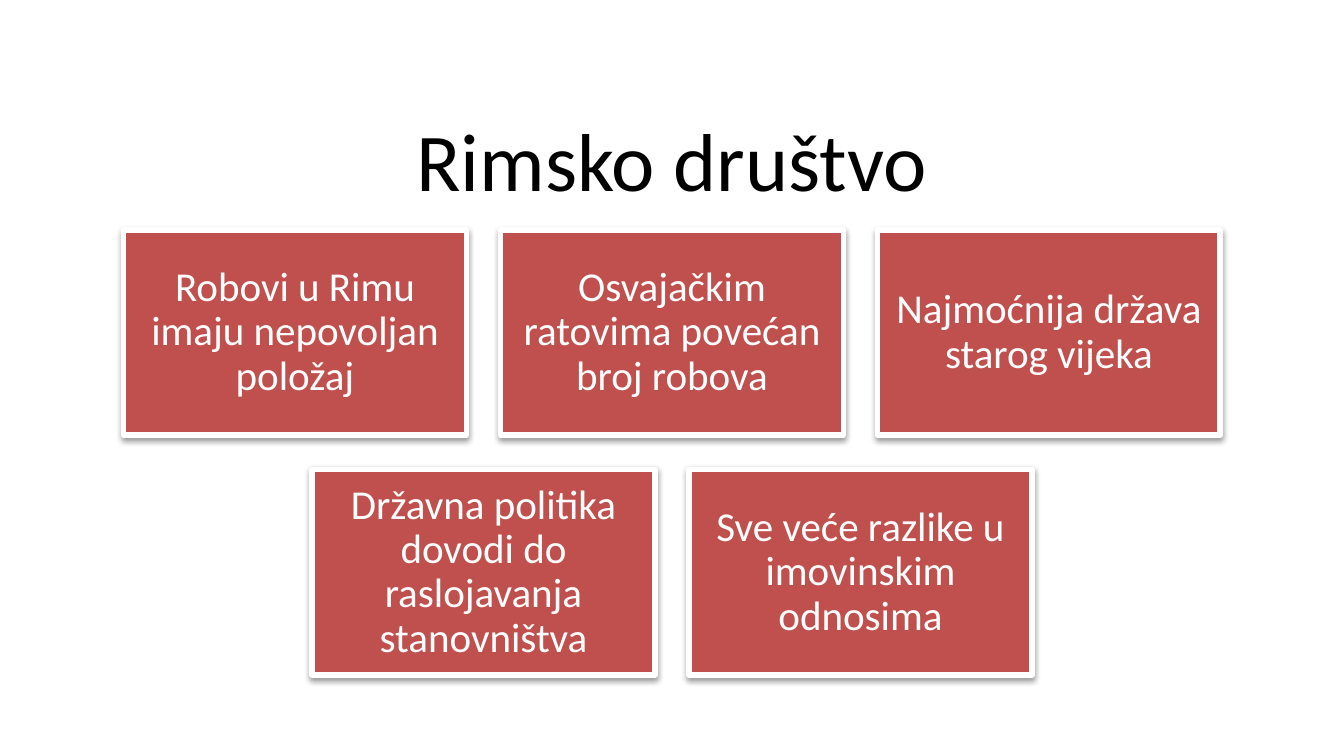
from dataclasses import dataclass
from lxml.etree import SubElement as Sub
from pptx import Presentation
from pptx.dml.color import RGBColor as Rgb
from pptx.enum.shapes import MSO_SHAPE as Shape
from pptx.enum.text import MSO_ANCHOR as Anchor, PP_ALIGN as Align
from pptx.oxml.ns import qn
from pptx.util import Inches, Pt


@dataclass(frozen=True)
class Theme:
    font: str = "Calibri"
    dark: str = "000000"
    light: str = "FFFFFF"
    fill: str = "C0504D"
    head: int = 44
    body: int = 22
    edge: int = 3


THEME = Theme()
WIDE = 10
HIGH = WIDE * 9 / 16

# Card grid: each row is centred on the slide
CARD_W = 2.55
CARD_H = CARD_W * 0.6
GAP = CARD_W * 0.1
TOP = 1.71
ROWS = [
    [
        "Robovi u Rimu imaju nepovoljan položaj",
        "Osvajačkim ratovima povećan broj robova",
        "Najmoćnija država starog vijeka",
    ],
    [
        "Državna politika dovodi do raslojavanja stanovništva",
        "Sve veće razlike u imovinskim odnosima",
    ],
]


def write(frame, text, size, color):
    """Fill a frame with one centred paragraph."""
    frame.word_wrap = True
    frame.vertical_anchor = Anchor.MIDDLE
    para = frame.paragraphs[0]
    para.text = text
    para.alignment = Align.CENTER
    para.line_spacing = 0.9
    font = para.font
    font.name, font.size = THEME.font, Pt(size)
    font.color.rgb = Rgb.from_string(color)


def shade(shape):
    """Give a shape a soft shadow straight below it."""
    shape.shadow.inherit = False
    effects = shape.element.spPr.find(qn("a:effectLst"))
    outer = Sub(effects, qn("a:outerShdw"), blurRad=str(Pt(3.1)),
                dist=str(Pt(1.6)), dir="5400000", rotWithShape="0")
    color = Sub(outer, qn("a:srgbClr"), val=THEME.dark)
    Sub(color, qn("a:alpha"), val="38000")


def add_title(slide, text):
    title = slide.shapes.title
    title.left, title.top = Inches(0.5), Inches(0.84)
    title.width, title.height = Inches(WIDE - 1), Inches(0.78)
    write(title.text_frame, text, THEME.head, THEME.dark)


def add_card(slide, left, top, text):
    card = slide.shapes.add_shape(
        Shape.RECTANGLE, Inches(left), Inches(top),
        Inches(CARD_W), Inches(CARD_H))
    card.fill.solid()
    card.fill.fore_color.rgb = Rgb.from_string(THEME.fill)
    card.line.color.rgb = Rgb.from_string(THEME.light)
    card.line.width = Pt(THEME.edge)
    shade(card)
    frame = card.text_frame
    frame.margin_left = frame.margin_right = Inches(0.09)
    frame.margin_top = frame.margin_bottom = Inches(0.09)
    write(frame, text, THEME.body, THEME.light)


def add_row(slide, top, texts):
    step = CARD_W + GAP
    left = (WIDE - len(texts) * step + GAP) / 2
    for col, text in enumerate(texts):
        add_card(slide, left + col * step, top, text)


def main():
    deck = Presentation()
    deck.slide_width, deck.slide_height = Inches(WIDE), Inches(HIGH)
    slide = deck.slides.add_slide(deck.slide_layouts[5])
    add_title(slide, "Rimsko društvo")
    for row, texts in enumerate(ROWS):
        add_row(slide, TOP + row * (CARD_H + GAP), texts)
    deck.save("out.pptx")


if __name__ == "__main__":
    main()
